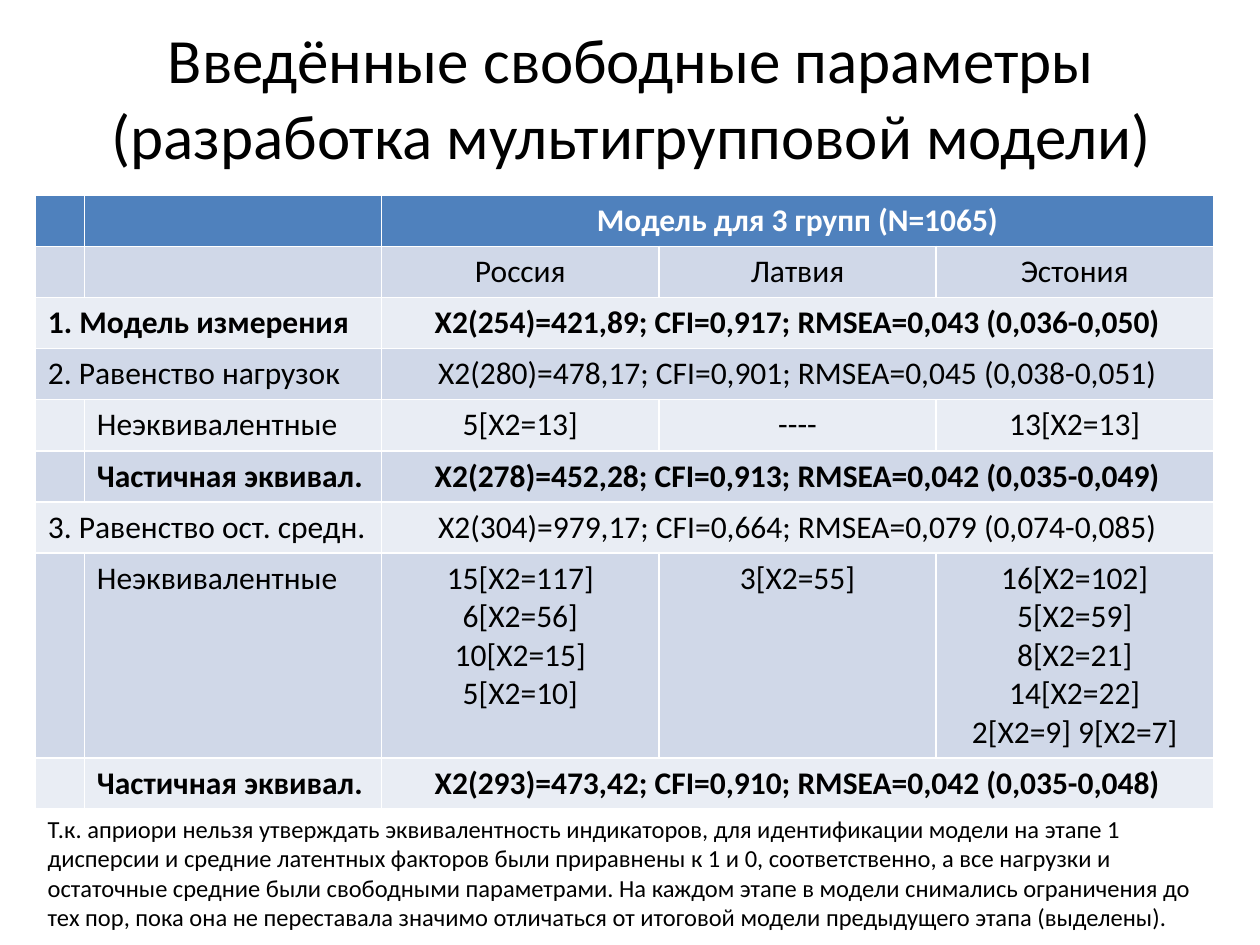
import pptx
import pptx.util
import pptx.dml.color
import pptx.enum.text
import pptx.oxml.ns
import lxml.etree

Inches = pptx.util.Inches
Pt = pptx.util.Pt
ALIGN = pptx.enum.text.PP_ALIGN
ANCHOR = pptx.enum.text.MSO_ANCHOR
qn = pptx.oxml.ns.qn

theme = {
    "font": "Calibri",
    "text": "000000", "light": "FFFFFF",
    "head": "4F81BD", "bands": ["E9EDF4", "D0D8E8"],
    "title": 36, "cell": 18, "note": 14,
}


def color(name):
    return pptx.dml.color.RGBColor.from_string(name)


def write(frame, text, size, ink=theme["text"], bold=False, align=None):
    """Fill a text frame; \\v in the text is a line break."""
    frame.text = text
    para = frame.paragraphs[0]
    para.alignment = align
    for run in para.runs:
        run.font.name = theme["font"]
        run.font.size = Pt(size)
        run.font.bold = bold
        run.font.color.rgb = color(ink)
    # Line breaks take the same size as the text around them
    for br in para._p.findall(qn("a:br")):
        lxml.etree.SubElement(br, qn("a:rPr"), sz=str(size * 100))


deck = pptx.Presentation()
deck.slide_width, deck.slide_height = Inches(10), Inches(7.5)
slide = deck.slides.add_slide(deck.slide_layouts[5])

# Title
title = slide.shapes.title
title.left, title.top = Inches(0.51), Inches(0.14)
title.width, title.height = Inches(9), Inches(1.25)
title.text_frame.vertical_anchor = ANCHOR.MIDDLE
write(title.text_frame,
      "Введённые свободные параметры\v(разработка мультигрупповой модели)",
      theme["title"], align=ALIGN.CENTER)

# Table: None continues the cell to its left
rows = [
    ["", "", "Модель для 3 групп (N=1065)", None, None],
    ["", "", "Россия", "Латвия", "Эстония"],
    ["1. Модель измерения", None,
     "X2(254)=421,89; CFI=0,917; RMSEA=0,043 (0,036-0,050)", None, None],
    ["2. Равенство нагрузок", None,
     "X2(280)=478,17; CFI=0,901; RMSEA=0,045 (0,038-0,051)", None, None],
    ["", "Неэквивалентные", "5[X2=13]", "----", "13[X2=13]"],
    ["", "Частичная эквивал.",
     "X2(278)=452,28; CFI=0,913; RMSEA=0,042 (0,035-0,049)", None, None],
    ["3. Равенство ост. средн.", None,
     "X2(304)=979,17; CFI=0,664; RMSEA=0,079 (0,074-0,085)", None, None],
    ["", "Неэквивалентные",
     "15[X2=117]\v6[X2=56]\v10[X2=15]\v5[X2=10]", "3[X2=55]",
     "16[X2=102]\v5[X2=59]\v8[X2=21]\v14[X2=22]\v2[X2=9] 9[X2=7]"],
    ["", "Частичная эквивал.",
     "X2(293)=473,42; CFI=0,910; RMSEA=0,042 (0,035-0,048)", None, None],
]
widths = [0.39, 2.36, 2.2, 2.2, 2.2]
strong = {0, 2, 5, 8}
tall = 7

heights = [1.62 if r == tall else 0.4 for r in range(len(rows))]
grid = slide.shapes.add_table(
    len(rows), len(widths), Inches(0.28), Inches(1.55),
    Inches(sum(widths)), Inches(sum(heights))).table
for col, width in zip(grid.columns, widths):
    col.width = Inches(width)
for r, row in enumerate(rows):
    grid.rows[r].height = Inches(heights[r])
    for c, text in enumerate(row):
        cell = grid.cell(r, c)
        cell.fill.solid()
        cell.fill.fore_color.rgb = color(
            theme["bands"][r % 2] if r else theme["head"])
        if text is None:
            continue
        end = c
        while end + 1 < len(row) and row[end + 1] is None:
            end += 1
        if end > c:
            cell.merge(grid.cell(r, end))
        if text:
            write(cell.text_frame, text, theme["cell"],
                  ink=theme["text"] if r else theme["light"],
                  bold=r in strong,
                  align=ALIGN.CENTER if c > 1 else None)

# Note under the table
note = slide.shapes.add_textbox(
    Inches(0.28), Inches(6.41), Inches(9.29), Inches(1.04))
note.text_frame.word_wrap = True
write(note.text_frame,
      "Т.к. априори нельзя утверждать эквивалентность индикаторов, для "
      "идентификации модели на этапе 1 дисперсии и средние латентных факторов "
      "были приравнены к 1 и 0, соответственно, а все нагрузки и остаточные "
      "средние были свободными параметрами. На каждом этапе в модели снимались "
      "ограничения до тех пор, пока она не переставала значимо отличаться от "
      "итоговой модели предыдущего этапа (выделены).",
      theme["note"])

deck.save("out.pptx")
